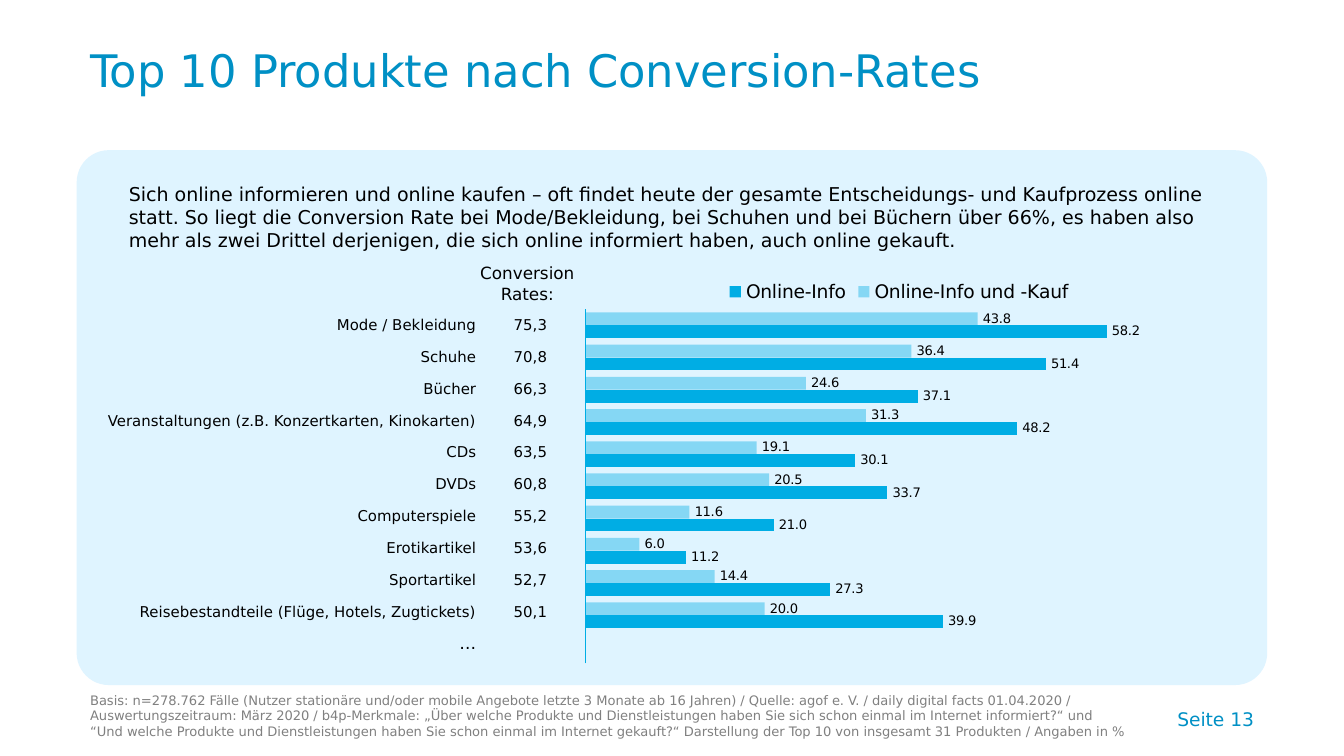
from typing import NamedTuple, Optional

from lxml.etree import SubElement
from pptx import Presentation
from pptx.chart.data import CategoryChartData
from pptx.dml.color import RGBColor
from pptx.enum.chart import XL_CHART_TYPE as Kind
from pptx.enum.chart import XL_LABEL_POSITION as Spot
from pptx.enum.chart import XL_LEGEND_POSITION as Side
from pptx.enum.chart import XL_TICK_LABEL_POSITION as Ticks
from pptx.enum.chart import XL_TICK_MARK as Mark
from pptx.enum.shapes import MSO_SHAPE as Form
from pptx.enum.text import MSO_ANCHOR as Anchor
from pptx.enum.text import MSO_AUTO_SIZE as Fit
from pptx.enum.text import PP_ALIGN as Align
from pptx.oxml import parse_xml
from pptx.oxml.ns import nsdecls, qn
from pptx.util import Cm, Pt

FONT = "DejaVu Sans"
BLACK = RGBColor(0x00, 0x00, 0x00)
GREY = RGBColor(0x80, 0x80, 0x80)
BLUE = RGBColor(0x00, 0x90, 0xC5)
CYAN = RGBColor(0x00, 0xAD, 0xE4)
PALE = RGBColor(0xDF, 0xF4, 0xFF)
PLAIN = "{2D5ABB26-0587-4C30-8999-92F81FD0307C}"  # table style without grid


class Box(NamedTuple):
    left: float
    top: float
    width: float
    height: float

    def cm(self) -> list:
        return [Cm(side) for side in self]


class Item(NamedTuple):
    name: str
    rate: str
    both: Optional[float]
    info: Optional[float]


ITEMS = [
    Item("Mode / Bekleidung", "75,3", 43.8, 58.2),
    Item("Schuhe", "70,8", 36.4, 51.4),
    Item("Bücher", "66,3", 24.6, 37.1),
    Item("Veranstaltungen (z.B. Konzertkarten, Kinokarten)", "64,9", 31.3, 48.2),
    Item("CDs", "63,5", 19.1, 30.1),
    Item("DVDs", "60,8", 20.5, 33.7),
    Item("Computerspiele", "55,2", 11.6, 21.0),
    Item("Erotikartikel", "53,6", 6.0, 11.2),
    Item("Sportartikel", "52,7", 14.4, 27.3),
    Item("Reisebestandteile (Flüge, Hotels, Zugtickets)", "50,1", 20.0, 39.9),
    Item("…", "", None, None),
]

INTRO = ["Sich online informieren und online kaufen – oft findet heute der gesamte "
         "Entscheidungs- und Kaufprozess online statt. So liegt die Conversion Rate bei "
         "Mode/Bekleidung, bei Schuhen und bei Büchern über 66%, es haben also mehr als "
         "zwei Drittel derjenigen, die sich online informiert haben, auch online gekauft."]
NOTE = ["Basis: n=278.762 Fälle (Nutzer stationäre und/oder mobile Angebote letzte "
        "3 Monate ab 16 Jahren) / Quelle: agof e. V. / daily digital facts 01.04.2020 / "
        "Auswertungszeitraum: März 2020 / b4p-Merkmale: „Über welche Produkte und "
        "Dienstleistungen haben Sie sich schon einmal im Internet informiert?“ und ",
        "“Und welche Produkte und Dienstleistungen haben Sie schon einmal im Internet "
        "gekauft?“ Darstellung der Top 10 von insgesamt 31 Produkten / Angaben in %"]


def style(font, size: float, color: RGBColor = BLACK) -> None:
    font.name, font.size = FONT, Pt(size)
    font.color.rgb = color


def fill_holder(holder, box: Box, lines: list, size: float, color: RGBColor,
                anchor=Anchor.TOP, space: float = 1.0) -> None:
    """Move a placeholder and give it one paragraph without a bullet."""
    holder.left, holder.top, holder.width, holder.height = box.cm()
    frame = holder.text_frame
    frame.word_wrap, frame.auto_size = True, Fit.NONE
    frame.vertical_anchor = anchor
    para = frame.paragraphs[0]
    props = para._p.get_or_add_pPr()
    props.set("marL", "0")
    props.set("indent", "0")
    SubElement(props, qn("a:buNone"))
    para.alignment, para.line_spacing, para.space_before = Align.LEFT, space, Pt(0)
    style(para.font, size, color)
    for i, line in enumerate(lines):
        if i:
            para.add_line_break()
        para.add_run().text = line


def add_label(slide, box: Box, lines: list, size: float, color: RGBColor,
              align, anchor=Anchor.TOP, wrap: bool = True) -> None:
    frame = slide.shapes.add_textbox(*box.cm()).text_frame
    frame.word_wrap, frame.vertical_anchor = wrap, anchor
    for i, line in enumerate(lines):
        para = frame.add_paragraph() if i else frame.paragraphs[0]
        para.text, para.alignment = line, align
        style(para.font, size, color)


def add_panel(slide, box: Box) -> None:
    panel = slide.shapes.add_shape(Form.ROUNDED_RECTANGLE, *box.cm())
    panel.adjustments[0] = 0.06
    panel.shadow.inherit = False
    panel.fill.solid()
    panel.fill.fore_color.rgb = PALE
    panel.line.fill.background()
    slide.shapes._spTree.insert(2, panel._element)  # behind all else


def add_rates(slide, box: Box, widths: tuple) -> None:
    table = slide.shapes.add_table(len(ITEMS), len(widths), *box.cm()).table
    table.first_row = table.horz_banding = False
    table._tbl.tblPr.find(qn("a:tableStyleId")).text = PLAIN
    for col, width in zip(table.columns, widths):
        col.width = Cm(width)
    for row, item in zip(table.rows, ITEMS):
        row.height = Cm(box.height / len(ITEMS))
        size = 8 if item.rate else 9
        for cell, text, align in zip(row.cells, item[:2], (Align.RIGHT, Align.CENTER)):
            cell.fill.background()
            cell.vertical_anchor = Anchor.MIDDLE
            cell.margin_left = cell.margin_right = cell.margin_top = Cm(0.02)
            cell.margin_bottom = 0
            para = cell.text_frame.paragraphs[0]
            para.alignment = align
            style(para.font, size)
            if text:
                para.add_run().text = text
            else:  # keeps the empty cell low
                SubElement(para._p, qn("a:endParaRPr"), sz=str(size * 100))


def add_bars(slide, box: Box) -> None:
    data = CategoryChartData(number_format="0.0")
    data.categories = [str(i + 1) for i in range(len(ITEMS))]
    data.add_series("Online-Info und -Kauf", [item.both for item in ITEMS])
    data.add_series("Online-Info", [item.info for item in ITEMS])
    chart = slide.shapes.add_chart(Kind.BAR_CLUSTERED, *box.cm(), data).chart
    style(chart.font, 9)
    chart.has_title = False
    chart.has_legend = True
    chart.legend.position, chart.legend.include_in_layout = Side.TOP, False
    style(chart.legend.font, 10)

    # Axes
    cats, vals = chart.category_axis, chart.value_axis
    cats.reverse_order = True
    cats.tick_label_position = Ticks.NONE
    cats.major_tick_mark = cats.minor_tick_mark = Mark.NONE
    cats.format.line.color.rgb, cats.format.line.width = CYAN, Pt(0.75)
    vals.minimum_scale, vals.maximum_scale = 0, 70
    vals.has_major_gridlines = vals.visible = False

    # Bars and their values
    plot = chart.plots[0]
    plot.gap_width, plot.overlap, plot.vary_by_categories = 50, 0, False
    for series, alpha in zip(plot.series, (40, 100)):
        series.format.fill.solid()
        series.format.fill.fore_color.rgb = CYAN
        if alpha < 100:
            tint = next(series._element.iter(qn("a:srgbClr")))
            SubElement(tint, qn("a:alpha"), val=str(alpha * 1000))
        labels = series.data_labels
        labels.show_value, labels.position = True, Spot.OUTSIDE_END
        labels.number_format, labels.number_format_is_linked = "0.0", False
        style(labels.font, 7)

    # Plot area inside the chart
    area = chart._chartSpace.chart.plotArea
    for old in area.findall(qn("c:layout")):
        area.remove(old)
    parts = [("layoutTarget", "inner"), ("xMode", "edge"), ("yMode", "edge"),
             ("x", 0.03), ("y", 0.106), ("w", 0.94), ("h", 0.87)]
    inner = "".join(f'<c:{tag} val="{val}"/>' for tag, val in parts)
    area.insert(0, parse_xml(f'<c:layout {nsdecls("c")}><c:manualLayout>{inner}'
                             "</c:manualLayout></c:layout>"))


def main() -> None:
    deck = Presentation()
    deck.slide_width, deck.slide_height = Cm(25.4), Cm(14.29)
    slide = deck.slides.add_slide(deck.slide_layouts[3])
    title, intro, note = slide.placeholders

    # Panel, title and body texts
    add_panel(slide, Box(1.45, 2.84, 22.5, 10.11))
    fill_holder(title, Box(1.45, 0.71, 18.62, 1.42),
                ["Top 10 Produkte nach Conversion-Rates"], 24, BLUE, Anchor.MIDDLE, 0.8)
    fill_holder(intro, Box(2.18, 3.33, 21.11, 1.63), INTRO, 10.2, BLACK)
    fill_holder(note, Box(1.45, 13.11, 20.9, 0.99), NOTE, 7, GREY, Anchor.BOTTOM)

    # Rates and bars
    add_rates(slide, Box(1.73, 5.84, 9.3, 6.63), (7.29, 2.01))
    add_bars(slide, Box(10.69, 5.03, 12.6, 7.7))
    add_label(slide, Box(8.81, 4.85, 2.31, 1.02), ["Conversion", "Rates:"], 9, BLACK,
              Align.CENTER, wrap=False)

    # Page number
    add_label(slide, Box(16.61, 12.95, 7.34, 0.97), ["Seite 13"], 10, BLUE,
              Align.RIGHT, Anchor.BOTTOM)
    deck.save("out.pptx")


if __name__ == "__main__":
    main()
